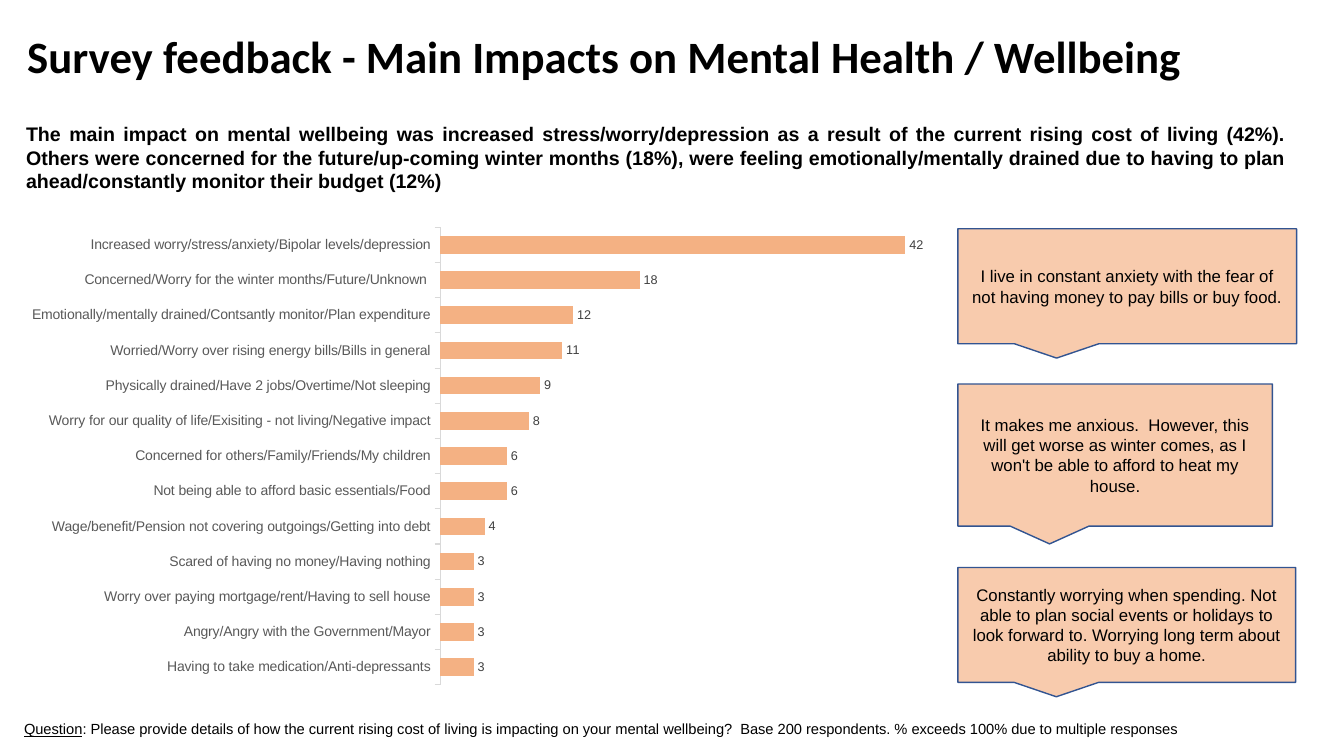
from dataclasses import dataclass

from lxml import etree
from pptx import Presentation
from pptx import util as u
from pptx.chart.data import CategoryChartData
from pptx.dml.color import RGBColor
from pptx.enum import chart as charts, shapes, text
from pptx.oxml import ns

EMU_PER_PX = 9144  # 100 px to the inch
FONT = "Arial"
BLACK, GREY, AXIS_GREY, LABEL_GREY = "000000", "595959", "D9D9D9", "404040"
BAR_FILL, QUOTE_FILL, QUOTE_LINE = "F4B183", "F8CBAD", "325491"

TITLE = "Survey feedback - Main Impacts on Mental Health / Wellbeing"
SUMMARY = (
    "The main impact on mental wellbeing was increased stress/worry/depression as a result of "
    "the current rising cost of living (42%). Others were concerned for the future/up-coming "
    "winter months (18%), were feeling emotionally/mentally drained due to having to plan "
    "ahead/constantly monitor their budget (12%) "
)
QUESTION = (
    ": Please provide details of how the current rising cost of living is impacting on your "
    "mental wellbeing?  Base 200 respondents. % exceeds 100% due to multiple responses"
)
IMPACTS = {
    "Increased worry/stress/anxiety/Bipolar levels/depression": 42,
    "Concerned/Worry for the winter months/Future/Unknown ": 18,
    "Emotionally/mentally drained/Contsantly monitor/Plan expenditure": 12,
    "Worried/Worry over rising energy bills/Bills in general": 11,
    "Physically drained/Have 2 jobs/Overtime/Not sleeping": 9,
    "Worry for our quality of life/Exisiting - not living/Negative impact": 8,
    "Concerned for others/Family/Friends/My children": 6,
    "Not being able to afford basic essentials/Food": 6,
    "Wage/benefit/Pension not covering outgoings/Getting into debt": 4,
    "Scared of having no money/Having nothing": 3,
    "Worry over paying mortgage/rent/Having to sell house": 3,
    "Angry/Angry with the Government/Mayor": 3,
    "Having to take medication/Anti-depressants": 3,
}


@dataclass(frozen=True)
class Quote:
    top: int
    width: int
    height: int
    words: str


QUOTE_LEFT = 950
QUOTES = [
    Quote(227, 336, 114, "I live in constant anxiety with the fear of not having money to pay "
          "bills or buy food."),
    Quote(381, 312, 141, "It makes me anxious.  However, this will get worse as winter comes, "
          "as I won't be able to afford to heat my house."),
    Quote(563, 335, 114, "Constantly worrying when spending. Not able to plan social events or "
          "holidays to look forward to. Worrying long term about ability to buy a home."),
]


def px(length: int) -> u.Emu:
    return u.Emu(length * EMU_PER_PX)


def area(*lengths: int) -> list[u.Emu]:
    return [px(length) for length in lengths]


def colour(value: str) -> RGBColor:
    return RGBColor.from_string(value)


def style_font(font, size: float, ink: str = BLACK, face: str = FONT, bold: bool = False) -> None:
    font.name, font.size, font.bold = face, u.Pt(size), bold
    font.color.rgb = colour(ink)


def write(para, words: str, *, size: float, face: str = FONT, bold: bool = False,
          underline: bool = False, align=None) -> None:
    """Append one formatted span to a paragraph."""
    span = para.add_run()
    span.text = words
    style_font(span.font, size, face=face, bold=bold)
    span.font.underline = underline
    if align is not None:
        para.alignment = align


def add_title(page) -> None:
    title = page.shapes.title
    title.left, title.top, title.width, title.height = area(17, 16, 1270, 85)
    frame = title.text_frame
    frame.word_wrap = True
    frame.vertical_anchor = text.MSO_ANCHOR.MIDDLE
    para = frame.paragraphs[0]
    para.line_spacing = 0.9
    write(para, TITLE, size=32, face="Calibri", bold=True, align=text.PP_ALIGN.LEFT)


def add_paragraph_box(page, left: int, top: int, width: int, height: int):
    """Add a wrapping text box and return its only paragraph."""
    frame = page.shapes.add_textbox(*area(left, top, width, height)).text_frame
    frame.word_wrap = True
    frame.auto_size = text.MSO_AUTO_SIZE.SHAPE_TO_FIT_TEXT
    return frame.paragraphs[0]


def place_plot(chart, **fractions: float) -> None:
    """Fix the inner plot area, in fractions of the chart."""
    plot_area = chart._chartSpace.chart.plotArea
    for old in plot_area.findall(ns.qn("c:layout")):
        plot_area.remove(old)
    layout = etree.Element(ns.qn("c:layout"))
    manual = etree.SubElement(layout, ns.qn("c:manualLayout"))
    settings = {"layoutTarget": "inner", "xMode": "edge", "yMode": "edge", **fractions}
    for name, value in settings.items():
        etree.SubElement(manual, ns.qn(f"c:{name}")).set("val", str(value))
    plot_area.insert(0, layout)


def add_impact_chart(page) -> None:
    data = CategoryChartData(number_format="0")
    data.categories = list(IMPACTS)
    data.add_series("Series 1", list(IMPACTS.values()))
    chart = page.shapes.add_chart(
        charts.XL_CHART_TYPE.BAR_CLUSTERED, *area(16, 211, 915, 483), data).chart
    chart.has_legend = chart.has_title = False
    style_font(chart.font, 9)
    place_plot(chart, x=0.46, y=0.03, w=0.54, h=0.94)

    categories, values = chart.category_axis, chart.value_axis
    categories.reverse_order = True
    categories.major_tick_mark = charts.XL_TICK_MARK.OUTSIDE
    categories.format.line.color.rgb = colour(AXIS_GREY)
    categories.format.line.width = u.Pt(0.75)
    style_font(categories.tick_labels.font, 10, GREY)
    values.minimum_scale, values.maximum_scale = 0, 45
    values.has_major_gridlines = values.visible = False

    plot = chart.plots[0]
    plot.gap_width, plot.vary_by_categories = 100, False
    bars = plot.series[0]
    bars.format.fill.solid()
    bars.format.fill.fore_color.rgb = colour(BAR_FILL)
    labels = bars.data_labels
    labels.show_value = True
    labels.number_format, labels.number_format_is_linked = "0", False
    labels.position = charts.XL_LABEL_POSITION.OUTSIDE_END
    style_font(labels.font, 9, LABEL_GREY)


def add_quote(page, quote: Quote) -> None:
    box = page.shapes.add_shape(shapes.MSO_SHAPE.RECTANGULAR_CALLOUT,
                                *area(QUOTE_LEFT, quote.top, quote.width, quote.height))
    box.shadow.inherit = False
    box.fill.solid()
    box.fill.fore_color.rgb = colour(QUOTE_FILL)
    box.line.color.rgb = colour(QUOTE_LINE)
    box.line.width = u.Pt(1)
    frame = box.text_frame
    frame.word_wrap = True
    frame.vertical_anchor = text.MSO_ANCHOR.MIDDLE
    write(frame.paragraphs[0], quote.words, size=12, align=text.PP_ALIGN.CENTER)


def main() -> None:
    deck = Presentation()
    deck.slide_width, deck.slide_height = area(1333, 750)
    page = deck.slides.add_slide(deck.slide_layouts.get_by_name("Title Only"))
    add_title(page)
    question = add_paragraph_box(page, 14, 709, 1306, 28)
    write(question, "Question", size=10.5, underline=True)
    write(question, QUESTION, size=10.5)
    summary = add_paragraph_box(page, 16, 116, 1270, 81)
    write(summary, SUMMARY, size=14, bold=True, align=text.PP_ALIGN.JUSTIFY)
    add_impact_chart(page)
    for quote in QUOTES:
        add_quote(page, quote)
    deck.save("out.pptx")


if __name__ == "__main__":
    main()
